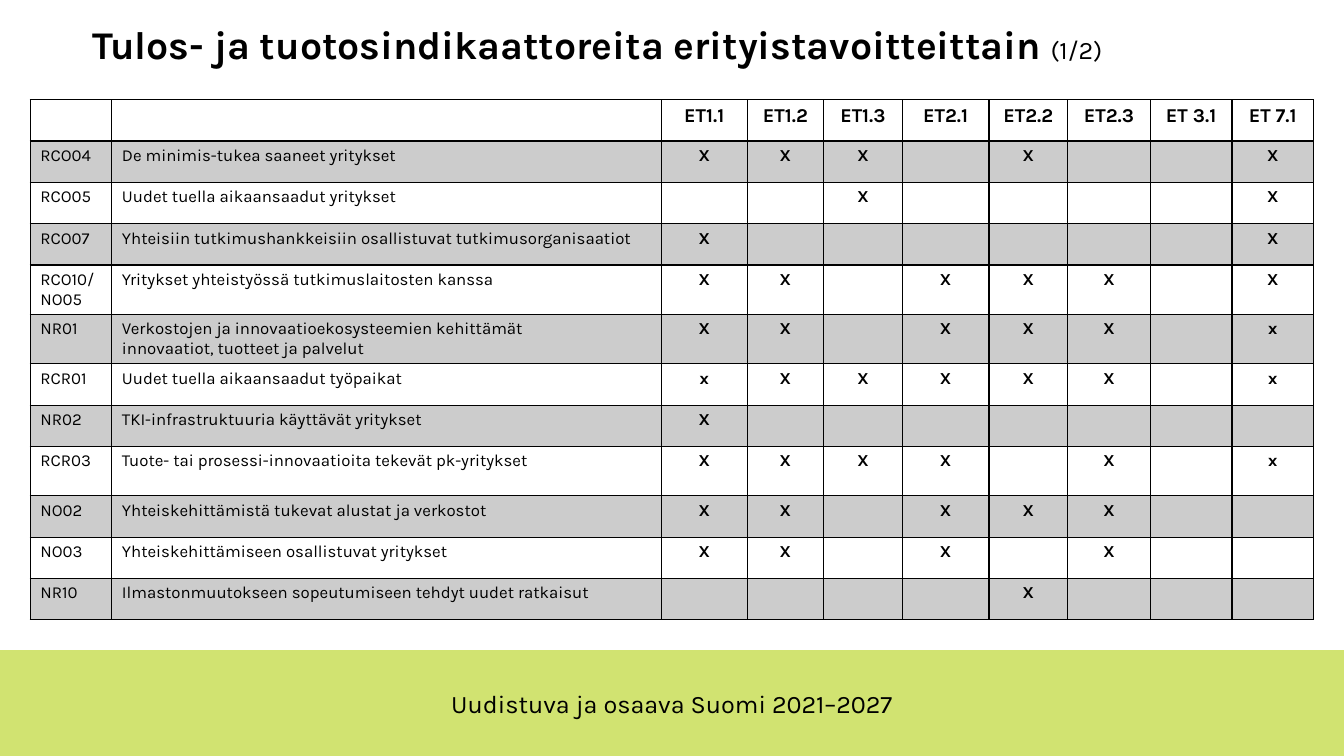
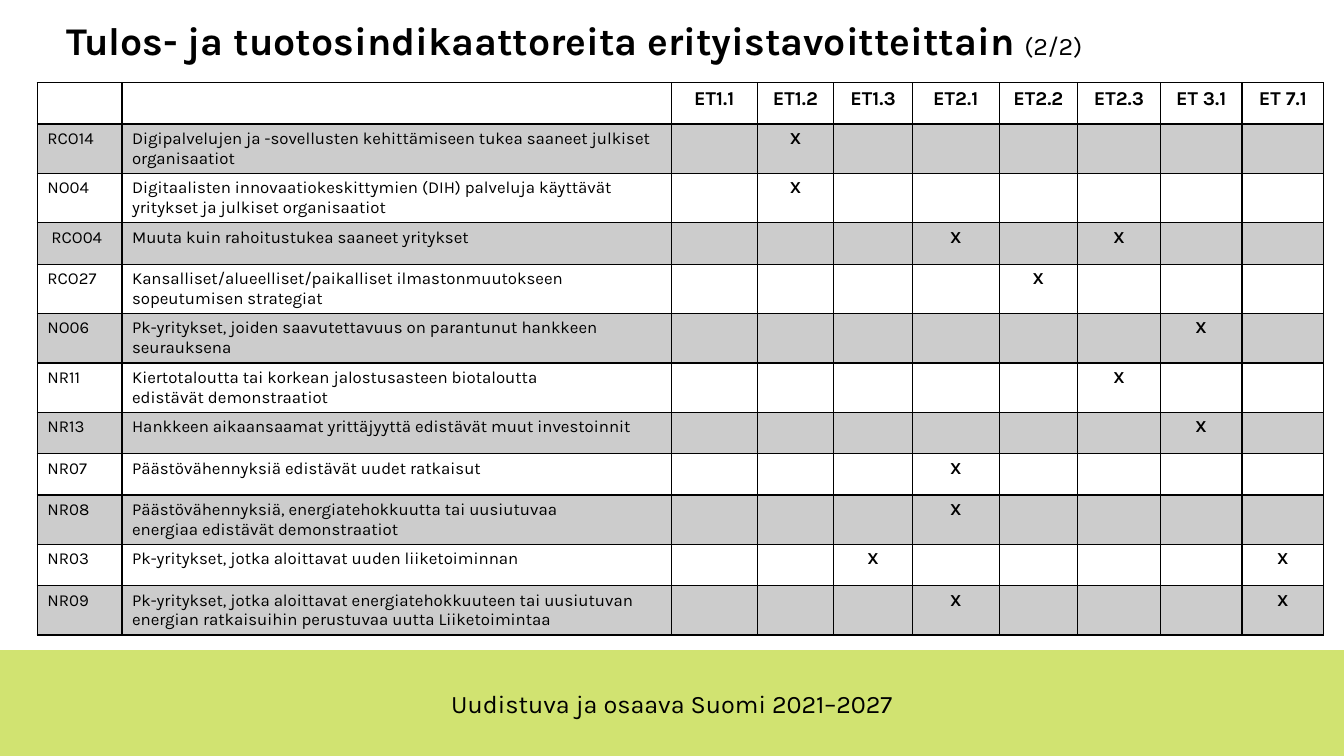
from lxml import etree
from pptx import Presentation
from pptx.dml.color import RGBColor
from pptx.enum import shapes, text
from pptx.oxml import ns
from pptx.util import Inches, Pt

BLACK = RGBColor(0x00, 0x00, 0x00)
LIME = RGBColor(0xD1, 0xE3, 0x71)
FONT = "Karla"
SHADE_ALPHA = 20
LINE_WIDTH, HEADER_LINE_WIDTH = 1, 2

FOOTER = "Uudistuva ja osaava Suomi 2021–2027"
TITLE = "Tulos- ja tuotosindikaattoreita erityistavoitteittain "
GOALS = ["ET1.1", "ET1.2", "ET1.3", "ET2.1", "ET2.2", "ET2.3", "ET 3.1", "ET 7.1"]
GOAL_WIDTHS = [0.85, 0.76, 0.78, 0.86, 0.78, 0.82, 0.81, 0.81]
NAME_WIDTH = 5.45
LOW, HIGH = 0.41, 0.49

# Code, name, one mark for each goal (a dot is an empty cell), row height
INDICATORS_1 = [
    ("RCO04", "De minimis-tukea saaneet yritykset", "XXX.X..X", LOW),
    ("RCO05", "Uudet tuella aikaansaadut yritykset", "..X....X", LOW),
    ("RCO07", "Yhteisiin tutkimushankkeisiin osallistuvat tutkimusorganisaatiot",
     "X......X", LOW),
    ("RCO10/NO05", "Yritykset yhteistyössä tutkimuslaitosten kanssa", "XX.XXX.X", HIGH),
    ("NR01", "Verkostojen ja innovaatioekosysteemien kehittämät\n"
     "innovaatiot, tuotteet ja palvelut", "XX.XXX.x", HIGH),
    ("RCR01", "Uudet tuella aikaansaadut työpaikat", "xXXXXX.x", LOW),
    ("NR02", "TKI-infrastruktuuria käyttävät yritykset", "X.......", LOW),
    ("RCR03", "Tuote- tai prosessi-innovaatioita tekevät pk-yritykset", "XXXX.X.x", HIGH),
    ("NO02", "Yhteiskehittämistä tukevat alustat ja verkostot", "XX.XXX..", LOW),
    ("NO03", "Yhteiskehittämiseen osallistuvat yritykset", "XX.X.X..", LOW),
    ("NR10", "Ilmastonmuutokseen sopeutumiseen tehdyt uudet ratkaisut", "....X...", LOW),
]
INDICATORS_2 = [
    ("RCO14", "Digipalvelujen ja -sovellusten kehittämiseen tukea saaneet julkiset "
     "organisaatiot", ".X......", HIGH),
    ("NO04", "Digitaalisten innovaatiokeskittymien (DIH) palveluja käyttävät "
     "yritykset ja julkiset organisaatiot", ".X......", HIGH),
    (" RCO04", "Muuta kuin rahoitustukea saaneet yritykset", "...X.X..", LOW),
    ("RCO27", "Kansalliset/alueelliset/paikalliset ilmastonmuutokseen "
     "sopeutumisen strategiat", "....X...", HIGH),
    ("NO06", "Pk-yritykset, joiden saavutettavuus on parantunut hankkeen seurauksena",
     "......X.", HIGH),
    ("NR11", "Kiertotaloutta tai korkean jalostusasteen biotaloutta\n"
     "edistävät demonstraatiot", ".....X..", HIGH),
    ("NR13", "Hankkeen aikaansaamat yrittäjyyttä edistävät muut investoinnit",
     "......X.", LOW),
    ("NR07", "Päästövähennyksiä edistävät uudet ratkaisut", "...X....", LOW),
    ("NR08", "Päästövähennyksiä, energiatehokkuutta tai uusiutuvaa\n"
     "energiaa edistävät demonstraatiot", "...X....", HIGH),
    ("NR03", "Pk-yritykset, jotka aloittavat uuden liiketoiminnan", "..X....X", LOW),
    ("NR09", "Pk-yritykset, jotka aloittavat energiatehokkuuteen tai uusiutuvan "
     "energian ratkaisuihin perustuvaa uutta Liiketoimintaa", "...X...X", HIGH),
]

PAGES = [
    {"number": "(1/2)", "title_box": (0.92, 0.39, 12.01, 0.28),
     "table_at": (0.3, 0.99), "code_width": 0.81, "indicators": INDICATORS_1},
    {"number": "(2/2)", "title_box": (0.66, 0.42, 12.17, 0.21),
     "table_at": (0.37, 0.82), "code_width": 0.84, "indicators": INDICATORS_2},
]


def style_font(font, size, bold=False):
    formats = {"name": FONT, "size": Pt(size), "bold": bold}
    for name, value in formats.items():
        setattr(font, name, value)
    font.color.rgb = BLACK


def style_frame(frame, anchor):
    formats = {"word_wrap": True, "auto_size": text.MSO_AUTO_SIZE.NONE,
               "vertical_anchor": anchor, "margin_left": 0, "margin_right": 0,
               "margin_top": 0, "margin_bottom": 0}
    for name, value in formats.items():
        setattr(frame, name, value)


def add_run(para, words, size, bold=False):
    span = para.add_run()
    span.text = words
    style_font(span.font, size, bold)


def add_footer(page, layout):
    """Draw the footer band on the page, then move it to the shared layout."""
    band = page.shapes.add_shape(shapes.MSO_SHAPE.RECTANGLE, 0, Inches(6.45),
                                 Inches(13.33), Inches(1.05))
    band.shadow.inherit = False
    band.fill.solid()
    band.fill.fore_color.rgb = LIME
    band.line.fill.background()
    box = page.shapes.add_textbox(*map(Inches, (3.25, 6.83, 6.83, 0.3)))
    style_frame(box.text_frame, text.MSO_ANCHOR.MIDDLE)
    para = box.text_frame.paragraphs[0]
    para.alignment = text.PP_ALIGN.CENTER
    add_run(para, FOOTER, 18)
    for shape in (band, box):
        layout.shapes.element.append(shape.element)


def add_title(page, number, box):
    title = page.shapes.title
    title.left, title.top, title.width, title.height = map(Inches, box)
    style_frame(title.text_frame, text.MSO_ANCHOR.BOTTOM)
    para = title.text_frame.paragraphs[0]
    para.alignment = text.PP_ALIGN.LEFT
    para.line_spacing = 0.9
    add_run(para, TITLE, 28, True)
    add_run(para, number, 18)


def set_borders(cell, top, bottom):
    properties = cell._tc.get_or_add_tcPr()
    widths = {"lnL": LINE_WIDTH, "lnR": LINE_WIDTH, "lnT": top, "lnB": bottom}
    for index, (side, width) in enumerate(widths.items()):
        line = etree.Element(ns.qn(f"a:{side}"), w=str(Pt(width)))
        fill = etree.SubElement(line, ns.qn("a:solidFill"))
        etree.SubElement(fill, ns.qn("a:srgbClr"), val=str(BLACK))
        properties.insert(index, line)


def shade(cell):
    cell.fill.solid()
    cell.fill.fore_color.rgb = BLACK
    color = cell._tc.tcPr.find(".//" + ns.qn("a:srgbClr"))
    etree.SubElement(color, ns.qn("a:alpha"), val=str(SHADE_ALPHA * 1000))


def fill_cell(cell, words, row, column):
    is_header, is_mark = row == 0, column >= 2
    if row % 2:
        shade(cell)
    else:
        cell.fill.background()
    set_borders(cell, HEADER_LINE_WIDTH if row == 1 else LINE_WIDTH,
                HEADER_LINE_WIDTH if is_header else LINE_WIDTH)
    if not words:
        return
    cell.text = words
    for para in cell.text_frame.paragraphs:
        if is_mark:
            para.alignment = text.PP_ALIGN.CENTER
        for span in para.runs:
            style_font(span.font, 14 if is_header else 12, is_mark)


def add_indicator_table(page, at, code_width, indicators):
    widths = [code_width, NAME_WIDTH, *GOAL_WIDTHS]
    heights = [LOW] + [indicator[3] for indicator in indicators]
    rows = [["", "", *GOALS]]
    for code, name, marks, _ in indicators:
        rows.append([code, name, *marks.replace(".", " ")])
    frame = page.shapes.add_table(len(rows), len(widths), *map(
        Inches, (*at, sum(widths), sum(heights))))
    table = frame.table
    table.first_row = table.horz_banding = False
    for column, width in zip(table.columns, widths):
        column.width = Inches(width)
    for row, (words, height) in enumerate(zip(rows, heights)):
        table.rows[row].height = Inches(height)
        for column, word in enumerate(words):
            fill_cell(table.cell(row, column), "" if word == " " else word, row, column)


def main():
    deck = Presentation()
    deck.slide_width, deck.slide_height = Inches(13.33), Inches(7.5)
    layout = deck.slide_layouts.get_by_name("Title Only")
    for index, content in enumerate(PAGES):
        page = deck.slides.add_slide(layout)
        if index == 0:
            add_footer(page, layout)
        add_title(page, content["number"], content["title_box"])
        add_indicator_table(page, content["table_at"], content["code_width"],
                            content["indicators"])
    deck.save("out.pptx")


if __name__ == "__main__":
    main()
